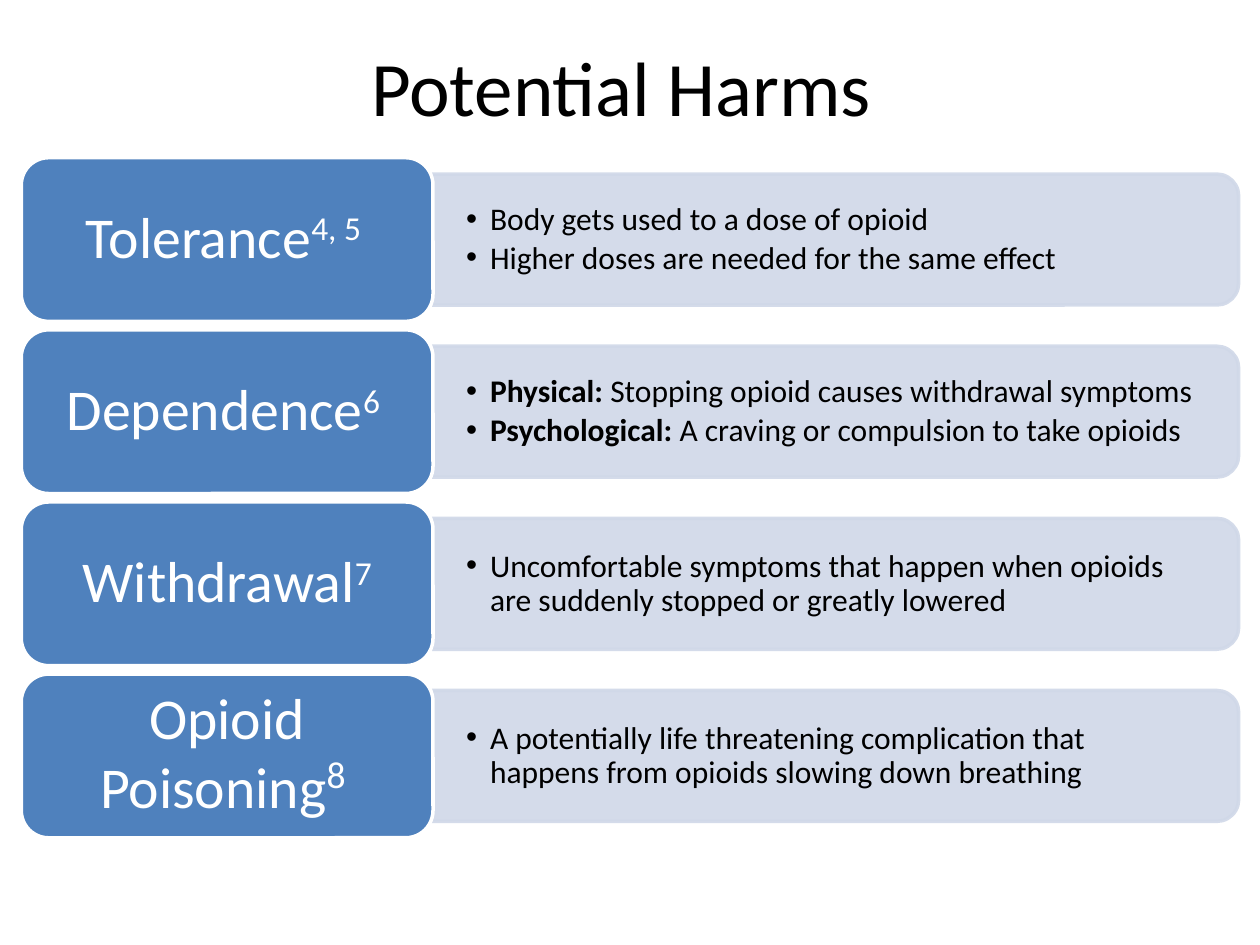
from typing import NamedTuple

from lxml.etree import SubElement
from pptx import Presentation
from pptx.dml.color import RGBColor
from pptx.enum.shapes import MSO_SHAPE
from pptx.enum.text import MSO_ANCHOR as Anchor, PP_ALIGN as Align
from pptx.oxml.ns import qn
from pptx.util import Cm, Pt

BLACK = RGBColor(0x00, 0x00, 0x00)
WHITE = RGBColor(0xFF, 0xFF, 0xFF)
BLUE = RGBColor(0x4F, 0x81, 0xBD)
PALE_BLUE = RGBColor(0xD0, 0xD8, 0xE8)
FONT = "Calibri"

# Row grid, in centimetres
FIRST_TOP, ROW_PITCH = 3.18, 3.47
LABEL_LEFT, LABEL_WIDTH, LABEL_HEIGHT = 0.43, 8.3, 3.3
PANEL_LEFT, PANEL_WIDTH, PANEL_HEIGHT = 8.71, 16.26, 2.64
TEXT_WIDTH, TEXT_HEIGHT = 16.13, 2.39
BULLET_INDENT = 0.48


class Bullet(NamedTuple):
    text: str
    lead: str = ""


class Harm(NamedTuple):
    name: str
    reference: str
    bullets: list[Bullet]
    reference_size: int = 33


HARMS = [
    Harm("Tolerance", "4, 5 ", [
        Bullet("Body gets used to a dose of opioid"),
        Bullet("Higher doses are needed for the same effect "),
    ]),
    Harm("Dependence", "6 ", [
        Bullet("Stopping opioid causes withdrawal symptoms", "Physical: "),
        Bullet("A craving or compulsion to take opioids", "Psychological: "),
    ]),
    Harm("Withdrawal", "7", [
        Bullet("Uncomfortable symptoms that happen when opioids "
               "are suddenly stopped or greatly lowered"),
    ]),
    Harm("Opioid Poisoning", "8 ", [
        Bullet("A potentially life threatening complication that "
               "happens from opioids slowing down breathing "),
    ], reference_size=37),
]


def add_run(paragraph, text: str, size: int, color: RGBColor, bold: bool = False):
    run = paragraph.add_run()
    run.text = text
    run.font.name = FONT
    run.font.size = Pt(size)
    run.font.bold = bold
    run.font.color.rgb = color
    return run


def set_frame(text_frame, side: float, edge: float) -> None:
    text_frame.word_wrap = True
    text_frame.vertical_anchor = Anchor.MIDDLE
    text_frame.margin_left = text_frame.margin_right = Cm(side)
    text_frame.margin_top = text_frame.margin_bottom = Cm(edge)


def paint(shape, fill: RGBColor, line: RGBColor) -> None:
    shape.shadow.inherit = False
    shape.fill.solid()
    shape.fill.fore_color.rgb = fill
    shape.line.color.rgb = line
    shape.line.width = Pt(2)


def add_panel(slide, middle: float) -> None:
    """Draw the pale panel: a shape with two round corners, turned to the right."""
    center = PANEL_LEFT + PANEL_WIDTH / 2
    shape = slide.shapes.add_shape(
        MSO_SHAPE.ROUND_2_SAME_RECTANGLE,
        Cm(center - PANEL_HEIGHT / 2), Cm(middle - PANEL_WIDTH / 2),
        Cm(PANEL_HEIGHT), Cm(PANEL_WIDTH))
    shape.rotation = 90
    paint(shape, PALE_BLUE, PALE_BLUE)
    for color in shape._element.spPr.iter(qn("a:srgbClr")):
        SubElement(color, qn("a:alpha"), val="90000")


def add_bullets(slide, middle: float, bullets: list[Bullet]) -> None:
    box = slide.shapes.add_textbox(
        Cm(PANEL_LEFT), Cm(middle - TEXT_HEIGHT / 2), Cm(TEXT_WIDTH), Cm(TEXT_HEIGHT))
    text_frame = box.text_frame
    set_frame(text_frame, 0.69, 0.36)
    for index, bullet in enumerate(bullets):
        paragraph = text_frame.add_paragraph() if index else text_frame.paragraphs[0]
        paragraph.level = 1
        paragraph.line_spacing = 0.9
        paragraph.space_after = Pt(2.7)
        properties = paragraph._p.get_or_add_pPr()
        properties.set("marL", str(Cm(BULLET_INDENT)))
        properties.set("indent", str(-Cm(BULLET_INDENT)))
        SubElement(properties, qn("a:buFont"), typeface="Arial")
        SubElement(properties, qn("a:buChar"), char="•")
        if bullet.lead:
            add_run(paragraph, bullet.lead, 18, BLACK, bold=True)
        add_run(paragraph, bullet.text, 18, BLACK)


def add_label(slide, top: float, harm: Harm) -> None:
    shape = slide.shapes.add_shape(
        MSO_SHAPE.ROUNDED_RECTANGLE,
        Cm(LABEL_LEFT), Cm(top), Cm(LABEL_WIDTH), Cm(LABEL_HEIGHT))
    paint(shape, BLUE, WHITE)
    set_frame(shape.text_frame, 0.36, 0.18)
    paragraph = shape.text_frame.paragraphs[0]
    paragraph.alignment = Align.CENTER
    paragraph.line_spacing = 0.9
    add_run(paragraph, harm.name, 33, WHITE)
    reference = add_run(paragraph, harm.reference, harm.reference_size, WHITE)
    reference.font._element.set("baseline", "30000")


def main() -> None:
    presentation = Presentation()
    presentation.slide_width, presentation.slide_height = Cm(25.4), Cm(19.05)
    slide = presentation.slides.add_slide(presentation.slide_layouts[5])

    # Title
    title = slide.shapes.title
    title.left, title.top, title.width, title.height = Cm(1.27), Cm(0.13), Cm(22.86), Cm(3.18)
    title.text_frame.vertical_anchor = Anchor.MIDDLE
    paragraph = title.text_frame.paragraphs[0]
    paragraph.alignment = Align.CENTER
    add_run(paragraph, "Potential Harms ", 44, BLACK)

    # One row per harm
    for row, harm in enumerate(HARMS):
        top = FIRST_TOP + row * ROW_PITCH
        middle = top + LABEL_HEIGHT / 2
        add_panel(slide, middle)
        add_bullets(slide, middle, harm.bullets)
        add_label(slide, top, harm)

    presentation.save("out.pptx")


if __name__ == "__main__":
    main()
